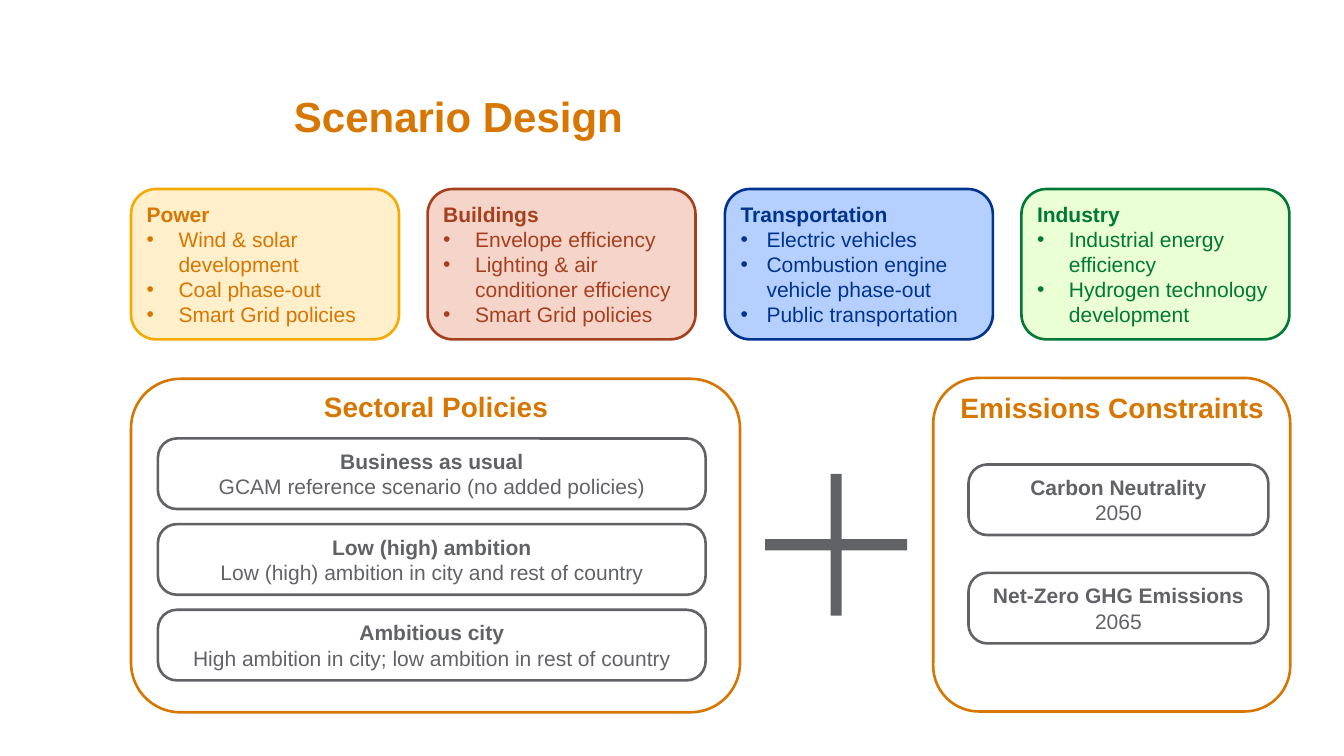
from lxml import etree
from pptx import Presentation
from pptx import util as u
from pptx.dml.color import RGBColor
from pptx.enum import shapes, text
from pptx.oxml import ns

PX = 9144  # EMU per px, 100 px to the inch
FONT = "Arial"
COLORS = {
    "orange": "D77600", "gray": "616265",
    "amber": "F4AA00", "cream": "FFEFCA",
    "rust": "A63F1E", "rose": "F5D4CA",
    "navy": "00338E", "sky": "B5D0FF",
    "green": "007836", "mint": "EAFFD3",
}
# heading, text colour, line colour, fill colour, bullet indent, bullets
SECTORS = [
    ("Power", "orange", "amber", "cream", 38,
     ["Wind & solar development", "Coal phase-out", "Smart Grid policies"]),
    ("Buildings", "rust", "rust", "rose", 38,
     ["Envelope efficiency", "Lighting & air conditioner efficiency", "Smart Grid policies"]),
    ("Transportation", "navy", "navy", "sky", 31,
     ["Electric vehicles", "Combustion engine vehicle phase-out", "Public transportation"]),
    ("Industry", "green", "green", "mint", 38,
     ["Industrial energy efficiency", "Hydrogen technology development"]),
]
POLICIES = [
    ("Business as usual", "GCAM reference scenario (no added policies)"),
    ("Low (high) ambition", "Low (high) ambition in city and rest of country"),
    ("Ambitious city", "High ambition in city; low ambition in rest of country"),
]
CONSTRAINTS = [("Carbon Neutrality", "2050"), ("Net-Zero GHG Emissions", "2065")]


def rgb(name):
    return RGBColor.from_string(COLORS[name])


def emu(*lengths):
    return [length * PX for length in lengths]


def add_box(slide, box, line=None, fill=None, corner=0.167,
            kind=shapes.MSO_SHAPE.ROUNDED_RECTANGLE):
    shape = slide.shapes.add_shape(kind, *emu(*box))
    shape.shadow.inherit = False
    shape.adjustments[0] = corner
    if fill:
        shape.fill.solid()
        shape.fill.fore_color.rgb = rgb(fill)
    else:
        shape.fill.background()
    if line:
        shape.line.color.rgb = rgb(line)
        shape.line.width = u.Pt(2.25)
    else:
        shape.line.fill.background()
    shape.text_frame.word_wrap = True
    return shape


def add_bullet(paragraph, indent):
    properties = paragraph._p.get_or_add_pPr()
    properties.set("marL", str(indent * PX))
    properties.set("indent", str(-indent * PX))
    etree.SubElement(properties, ns.qn("a:buFont")).set("typeface", FONT)
    etree.SubElement(properties, ns.qn("a:buChar")).set("char", "•")


def write_lines(frame, lines, color, size=18, align=text.PP_ALIGN.CENTER, indent=0):
    """Write a bold first line and plain lines under it, bulleted if indented."""
    for index, line in enumerate(lines):
        paragraph = frame.add_paragraph() if index else frame.paragraphs[0]
        paragraph.text = line
        paragraph.alignment = align
        if index and indent:
            add_bullet(paragraph, indent)
        font = paragraph.font
        font.name, font.size, font.bold = FONT, u.Pt(size), index == 0
        font.color.rgb = rgb(color)


def add_title(slide, box):
    frame = slide.shapes.add_textbox(*emu(*box)).text_frame
    frame.word_wrap = True
    frame.margin_left = 0
    frame.vertical_anchor = text.MSO_ANCHOR.BOTTOM
    write_lines(frame, ["Scenario Design"], "orange", 36, text.PP_ALIGN.LEFT)
    frame.paragraphs[0].line_spacing = 0.9


def add_sectors(slide, box):
    left, top, width, height = box
    card_width = 319
    pitch = (width - card_width) / (len(SECTORS) - 1)
    for index, (heading, color, line, fill, indent, bullets) in enumerate(SECTORS):
        card_left = left + round(index * pitch)
        card = add_box(slide, (card_left, top, card_width, height), line, fill)
        write_lines(card.text_frame, [heading, *bullets], color,
                    align=text.PP_ALIGN.LEFT, indent=indent)


def add_panel(slide, box, corner, heading, heading_at, options, first_at, option_width, pitch):
    """Outline with a heading and a column of options, offset from its top left."""
    left, top = box[:2]
    add_box(slide, box, "orange", corner=corner)
    label = add_box(slide, (left + heading_at[0], top + heading_at[1], 398, 56))
    write_lines(label.text_frame, [heading], "orange", 24)
    for index, lines in enumerate(options):
        option_top = top + first_at[1] + index * pitch
        option = add_box(slide, (left + first_at[0], option_top, option_width, 84),
                         "gray", corner=0.268)
        write_lines(option.text_frame, lines, "gray")


def main():
    presentation = Presentation()
    presentation.slide_width, presentation.slide_height = emu(1600, 900)
    slide = presentation.slides.add_slide(presentation.slide_layouts[6])
    add_title(slide, (350, 30, 1200, 143))
    add_sectors(slide, (156, 225, 1379, 179))
    add_box(slide, (911, 564, 169, 169), fill="gray", corner=0.461,
            kind=shapes.MSO_SHAPE.CROSS)
    add_panel(slide, (156, 451, 725, 397), 0.148, "Sectoral Policies", (164, 5),
              POLICIES, (32, 71), 652, 102)
    add_panel(slide, (1111, 450, 425, 397), 0.137, "Emissions Constraints", (14, 7),
              CONSTRAINTS, (42, 103), 357, 129)
    presentation.save("out.pptx")


if __name__ == "__main__":
    main()
